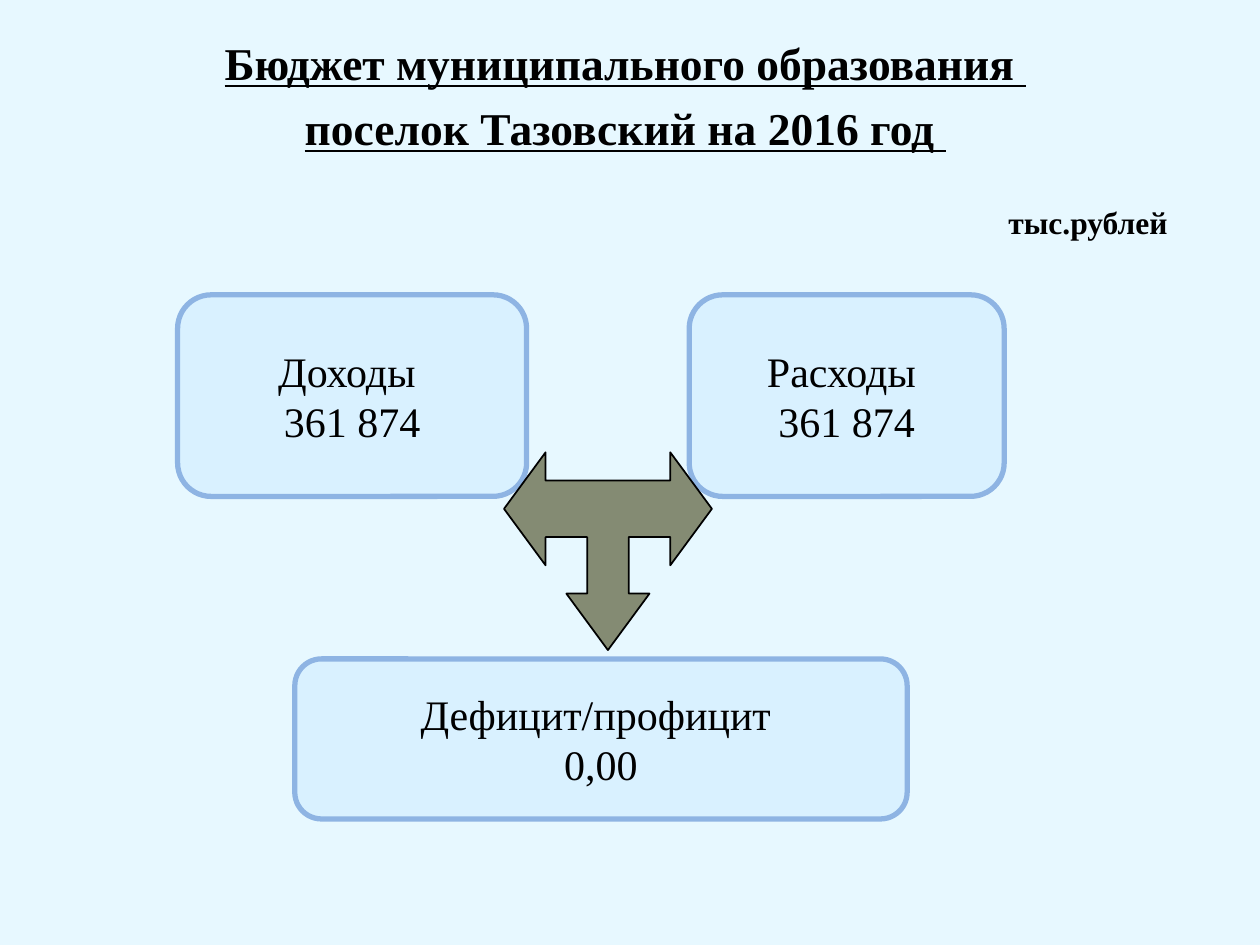
from dataclasses import dataclass

from lxml import etree
from pptx import Presentation, util as u
from pptx.dml.color import RGBColor
from pptx.enum import shapes, text
from pptx.oxml import ns


@dataclass(frozen=True)
class Theme:
    font: str = "Times New Roman"
    background: str = "E7F8FF"
    ink: str = "000000"
    box: str = "CCECFF"
    border: str = "8EB4E3"
    arrow: str = "333300"
    title_size: int = 26
    box_size: int = 24
    unit_size: int = 18


@dataclass(frozen=True)
class Box:
    left: float
    top: float
    width: float
    height: float
    lines: tuple[str, ...] = ()

    def place(self) -> tuple:
        return tuple(u.Inches(v) for v in (self.left, self.top, self.width, self.height))


THEME = Theme()
TITLE = Box(0.16, 0.23, 9.61, 1.17,
            ("Бюджет муниципального образования ", "поселок Тазовский на 2016 год "))
UNIT = Box(7.66, 1.56, 1.95, 0.4, ("тыс.рублей",))
BOXES = (
    Box(1.41, 2.34, 2.77, 1.6, ("Доходы ", "361 874")),
    Box(5.47, 2.34, 2.5, 1.6, ("Расходы ", "361 874")),
    Box(2.34, 5.23, 4.86, 1.27, ("Дефицит/профицит ", "0,00")),
)
ARROW = Box(4, 3.59, 1.65, 1.57)
ARROW_COLS, ARROW_ROWS = 10, 7
ARROW_RIGHT_HALF = ((5, 7), (7, 5), (6, 5), (6, 3), (8, 3), (8, 4), (10, 2), (8, 0), (8, 1))


def write(tf, lines: tuple[str, ...], *, size: int, bold: bool = False,
          underline: bool = False, before: float = 0, wrap: bool = True,
          anchor=text.MSO_ANCHOR.TOP) -> None:
    tf.auto_size = text.MSO_AUTO_SIZE.NONE
    tf.word_wrap = wrap
    tf.vertical_anchor = anchor
    for i, line in enumerate(lines):
        p = tf.add_paragraph() if i else tf.paragraphs[0]
        p.alignment = text.PP_ALIGN.CENTER
        p.space_before = u.Pt(before)
        r = p.add_run()
        r.text = line
        r.font.size = u.Pt(size)
        r.font.name = THEME.font
        r.font.bold = bold
        r.font.underline = underline
        r.font.color.rgb = RGBColor.from_string(THEME.ink)


def add_text_shadow(tf) -> None:
    for p in tf.paragraphs:
        for r in p.runs:
            fill = r.font.fill._xPr.find(ns.qn("a:solidFill"))
            effects = etree.Element(ns.qn("a:effectLst"))
            shadow = etree.SubElement(effects, ns.qn("a:outerShdw"), blurRad="38100",
                                      dist="38100", dir="2700000", algn="tl")
            color = etree.SubElement(shadow, ns.qn("a:srgbClr"), val=THEME.ink)
            etree.SubElement(color, ns.qn("a:alpha"), val="43000")
            fill.addnext(effects)


def paint(sp, fill: str, opacity: int, line: str, width: float) -> None:
    sp.shadow.inherit = False
    sp.fill.solid()
    sp.fill.fore_color.rgb = RGBColor.from_string(fill)
    color = sp._element.spPr.find(ns.qn("a:solidFill"))[0]
    etree.SubElement(color, ns.qn("a:alpha"), val=str(opacity * 1000))
    sp.line.color.rgb = RGBColor.from_string(line)
    sp.line.width = u.Pt(width)


def add_box(s, box: Box) -> None:
    sp = s.shapes.add_shape(shapes.MSO_SHAPE.ROUNDED_RECTANGLE, *box.place())
    paint(sp, THEME.box, 51, THEME.border, 3)
    write(sp.text_frame, box.lines, size=THEME.box_size, wrap=False,
          anchor=text.MSO_ANCHOR.MIDDLE)


def add_arrow(s, area: Box) -> None:
    left_half = tuple((ARROW_COLS - x, y) for x, y in reversed(ARROW_RIGHT_HALF[1:]))
    left, top, width, height = area.place()
    start, *rest = ARROW_RIGHT_HALF + left_half
    builder = s.shapes.build_freeform(*start, scale=(width / ARROW_COLS, height / ARROW_ROWS))
    builder.add_line_segments(rest, close=True)
    paint(builder.convert_to_shape(left, top), THEME.arrow, 55, THEME.ink, 1)


def main() -> None:
    prs = Presentation()
    prs.slide_width, prs.slide_height = u.Inches(10), u.Inches(7.5)
    s = prs.slides.add_slide(prs.slide_layouts.get_by_name("Title Only"))
    s.background.fill.solid()
    s.background.fill.fore_color.rgb = RGBColor.from_string(THEME.background)

    title = s.shapes.title
    title.left, title.top, title.width, title.height = TITLE.place()
    write(title.text_frame, TITLE.lines, size=THEME.title_size, bold=True,
          underline=True, before=6)
    add_text_shadow(title.text_frame)

    unit = s.shapes.add_textbox(*UNIT.place())
    write(unit.text_frame, UNIT.lines, size=THEME.unit_size, bold=True)

    *upper, balance = BOXES
    for box in upper:
        add_box(s, box)
    add_arrow(s, ARROW)
    add_box(s, balance)
    prs.save("out.pptx")


if __name__ == "__main__":
    main()
